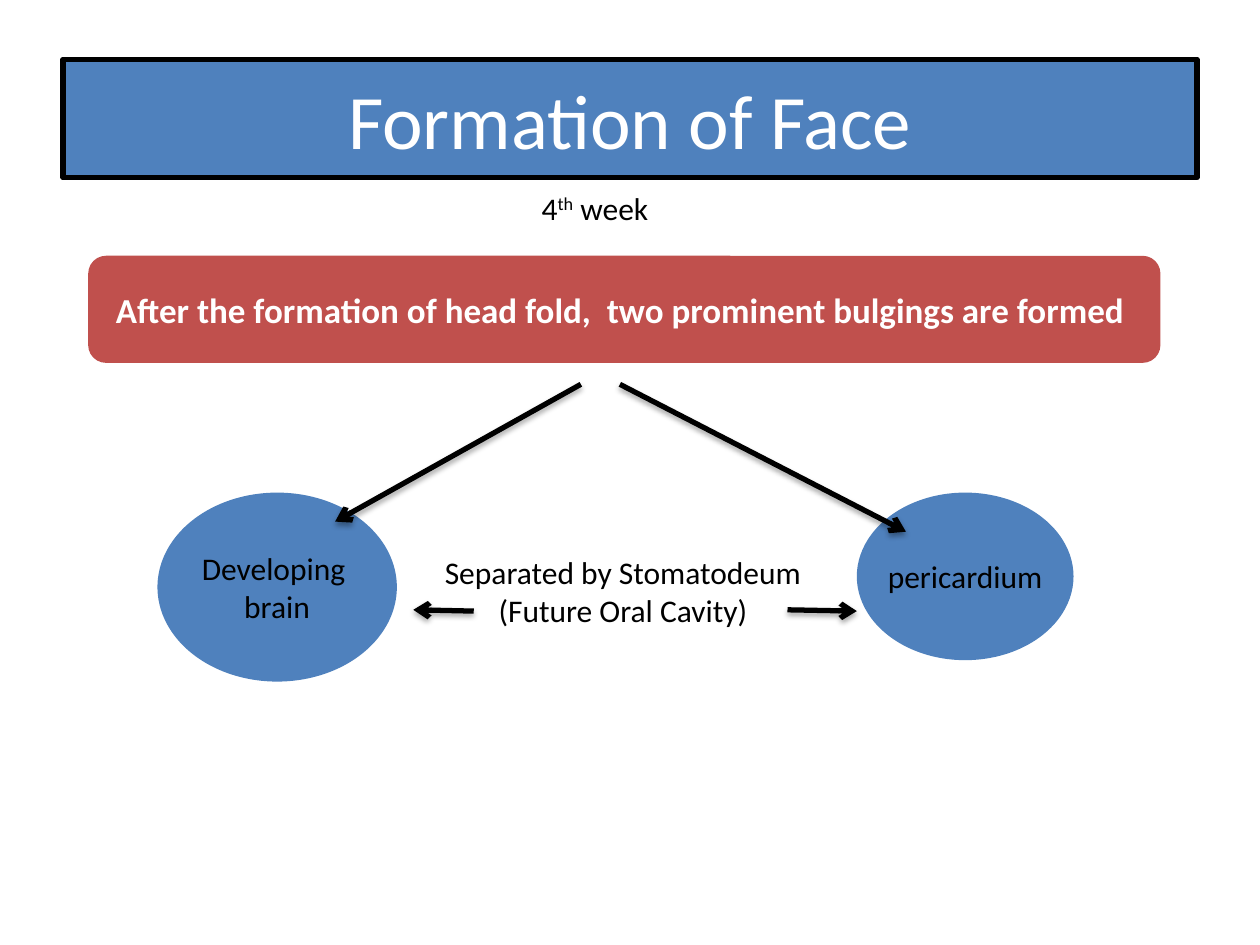
from dataclasses import dataclass

from lxml.etree import SubElement
from pptx import Presentation
from pptx.dml.color import RGBColor
from pptx.enum.shapes import MSO_CONNECTOR, MSO_SHAPE
from pptx.enum.text import MSO_ANCHOR, PP_ALIGN
from pptx.oxml import parse_xml
from pptx.oxml.ns import nsdecls, qn
from pptx.util import Pt

EMU_PER_PX = 9144
PAGE_WIDTH, PAGE_HEIGHT = 1000, 750


@dataclass(frozen=True)
class Theme:
    font: str = "Calibri"
    blue: str = "4F81BD"
    red: str = "C0504D"
    black: str = "000000"
    white: str = "FFFFFF"
    title_size: int = 44
    banner_size: int = 20
    body_size: int = 18
    line_width: int = 3


def px(value):
    return value * EMU_PER_PX


def add_span(para, text, *, font, size, color, bold=False, superscript=False):
    span = para.add_run()
    span.text = text
    span.font.name = font
    span.font.size = Pt(size)
    span.font.bold = bold
    span.font.color.rgb = RGBColor.from_string(color)
    if superscript:
        span._r.get_or_add_rPr().set("baseline", "30000")


class SlideBuilder:
    def __init__(self, page, theme):
        self.page = page
        self.theme = theme

    def place(self, box, left, top, width, height):
        box.left, box.top, box.width, box.height = map(px, (left, top, width, height))

    def fill_text(self, box, lines, *, size, color, bold=False, wrap=False):
        frame = box.text_frame
        frame.word_wrap = wrap
        frame.vertical_anchor = MSO_ANCHOR.MIDDLE
        for index, line in enumerate(lines):
            para = frame.add_paragraph() if index else frame.paragraphs[0]
            para.alignment = PP_ALIGN.CENTER
            add_span(para, line, font=self.theme.font, size=size, color=color, bold=bold)

    def title(self, text, *bounds):
        box = self.page.shapes.title
        self.place(box, *bounds)
        box.fill.solid()
        box.fill.fore_color.rgb = RGBColor.from_string(self.theme.blue)
        box.line.color.rgb = RGBColor.from_string(self.theme.black)
        box.line.width = Pt(self.theme.line_width)
        self.fill_text(box, [text], size=self.theme.title_size,
                       color=self.theme.white, wrap=True)

    def shape(self, kind, lines, *bounds, fill=None, **text_format):
        box = self.page.shapes.add_shape(kind, *map(px, bounds))
        box.shadow.inherit = False
        box.line.fill.background()
        if fill:
            box.fill.solid()
            box.fill.fore_color.rgb = RGBColor.from_string(fill)
        else:
            box.fill.background()
        self.fill_text(box, lines, **text_format)

    def label(self, spans, *bounds):
        box = self.page.shapes.add_textbox(*map(px, bounds))
        box.text_frame.word_wrap = True
        para = box.text_frame.paragraphs[0]
        for text, superscript in spans:
            add_span(para, text, font=self.theme.font, size=self.theme.body_size,
                     color=self.theme.black, superscript=superscript)

    def arrow(self, start, end):
        connector = self.page.shapes.add_connector(
            MSO_CONNECTOR.STRAIGHT, *map(px, (*start, *end)))
        connector.line.color.rgb = RGBColor.from_string(self.theme.black)
        connector.line.width = Pt(self.theme.line_width)
        properties = connector._element.spPr
        SubElement(properties.find(qn("a:ln")), qn("a:tailEnd"), type="arrow")
        properties.append(parse_xml(
            f'<a:effectLst {nsdecls("a")}>'
            '<a:outerShdw blurRad="40000" dist="23000" dir="5400000" rotWithShape="0">'
            f'<a:srgbClr val="{self.theme.black}"><a:alpha val="35000"/></a:srgbClr>'
            '</a:outerShdw></a:effectLst>'))


def main():
    deck = Presentation()
    deck.slide_width, deck.slide_height = px(PAGE_WIDTH), px(PAGE_HEIGHT)
    theme = Theme()
    builder = SlideBuilder(deck.slides.add_slide(deck.slide_layouts[5]), theme)
    body = {"size": theme.body_size, "color": theme.black}

    builder.title("Formation of Face", 50, 47, 900, 94)
    builder.label([("4", False), ("th", True), (" week", False)], 420, 145, 151, 50)
    builder.shape(MSO_SHAPE.ROUNDED_RECTANGLE,
                  ["After the formation of head fold,  two prominent bulgings are formed "],
                  70, 203, 851, 85, fill=theme.red,
                  size=theme.banner_size, color=theme.white, bold=True)
    builder.shape(MSO_SHAPE.OVAL, ["Developing ", "brain"],
                  125, 391, 190, 150, fill=theme.blue, **body)
    builder.shape(MSO_SHAPE.OVAL, ["pericardium"],
                  680, 391, 172, 133, fill=theme.blue, **body)
    builder.shape(MSO_SHAPE.ROUNDED_RECTANGLE,
                  ["Separated by Stomatodeum", "(Future Oral Cavity)"],
                  148, 422, 693, 94, **body)

    for start, end in (
        ((625, 484), (680, 485)),
        ((376, 485), (328, 484)),
        ((461, 305), (266, 414)),
        ((492, 305), (719, 422)),
    ):
        builder.arrow(start, end)

    deck.save("out.pptx")


if __name__ == "__main__":
    main()
